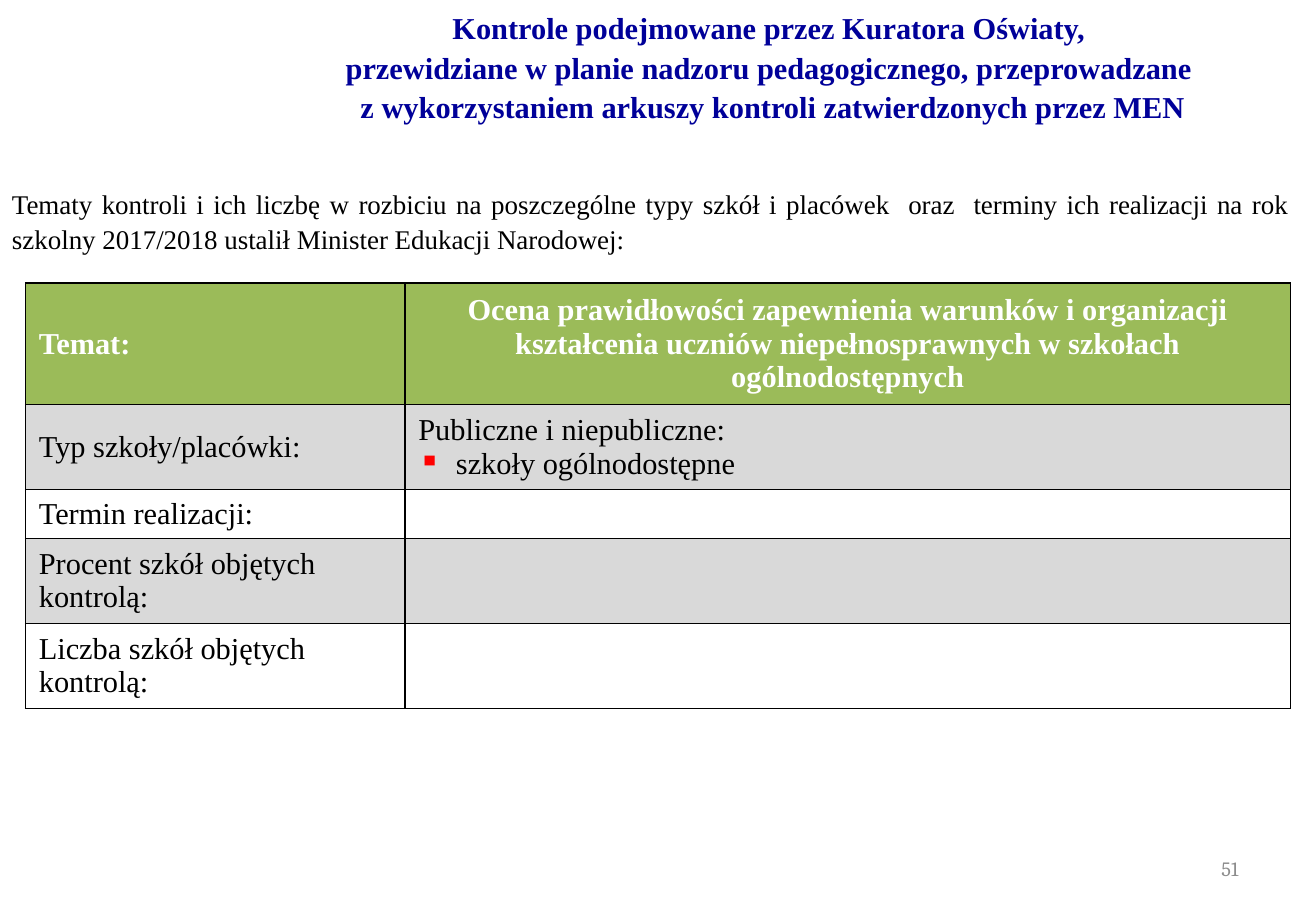
from lxml import etree
from pptx import Presentation
from pptx import util as u
from pptx.dml.color import RGBColor
from pptx.enum import text
from pptx.oxml import ns

COLORS = {"navy": "000099", "black": "000000", "white": "FFFFFF", "green": "9BBB59",
          "band": "D9D9D9", "bullet": "FF0000", "number": "8C8C8C"}
SERIF = "Times New Roman"
TITLE = {"name": SERIF, "size": u.Pt(18), "bold": True, "color": "navy"}
INTRO = {"name": SERIF, "size": u.Pt(16), "bold": False, "color": "black"}
HEAD = {**TITLE, "color": "white"}
CELL = {**INTRO, "size": u.Pt(18)}
NUMBER = {"name": "Cambria", "size": u.Pt(12), "bold": False, "color": "number"}
LEFT, CENTER, RIGHT, JUSTIFY = (text.PP_ALIGN.LEFT, text.PP_ALIGN.CENTER,
                                text.PP_ALIGN.RIGHT, text.PP_ALIGN.JUSTIFY)
TOP, MIDDLE = text.MSO_ANCHOR.TOP, text.MSO_ANCHOR.MIDDLE
ROWS = [
    (0.94, "Temat:", ["Ocena prawidłowości zapewnienia warunków i organizacji "
                      "kształcenia uczniów niepełnosprawnych w szkołach ogólnodostępnych"]),
    (0.66, "Typ szkoły/placówki:", ["Publiczne i niepubliczne:", "▪szkoły ogólnodostępne"]),
    (0.4, "Termin realizacji:", [""]),
    (0.65, "Procent szkół objętych kontrolą:", [""]),
    (0.65, "Liczba szkół objętych kontrolą:", [""]),
]


def style_font(font, style):
    for key, value in style.items():
        if key == "color":
            font.color.rgb = RGBColor.from_string(COLORS[value])
        else:
            setattr(font, key, value)


def add_bullet(para):
    props = para._p.get_or_add_pPr()
    props.set("marL", str(u.Inches(0.31)))
    props.set("indent", str(u.Inches(-0.31)))
    color = etree.SubElement(props, ns.qn("a:buClr"))
    etree.SubElement(color, ns.qn("a:srgbClr"), val=COLORS["bullet"])
    etree.SubElement(props, ns.qn("a:buChar"), char="▪")


def write(frame, lines, style, align, spacing=None):
    for index, line in enumerate(lines):
        para = frame.add_paragraph() if index else frame.paragraphs[0]
        para.alignment = align
        para.line_spacing = spacing
        if line.startswith("▪"):
            add_bullet(para)
        para.text = line.removeprefix("▪")
        style_font(para.font, style)
        for span in para.runs:
            style_font(span.font, style)


def add_text(page, box, line, style, align, anchor, spacing=None):
    frame = page.shapes.add_textbox(*map(u.Inches, box)).text_frame
    frame.word_wrap = True
    frame.vertical_anchor = anchor
    write(frame, [line], style, align, spacing)


def add_borders(cell):
    props = cell._tc.get_or_add_tcPr()
    for index, side in enumerate(("lnL", "lnR", "lnT", "lnB")):
        line = etree.Element(ns.qn(f"a:{side}"), w=str(u.Pt(1)))
        fill = etree.SubElement(line, ns.qn("a:solidFill"))
        etree.SubElement(fill, ns.qn("a:srgbClr"), val=COLORS["black"])
        props.insert(index, line)


def add_inspection_table(page, box):
    table = page.shapes.add_table(len(ROWS), 2, *map(u.Inches, box)).table
    label_width = 0.3 * box[2]
    for column, width in zip(table.columns, (label_width, box[2] - label_width)):
        column.width = u.Inches(width)
    for index, (height, label, details) in enumerate(ROWS):
        table.rows[index].height = u.Inches(height)
        fill = "band" if index % 2 else "white"
        for cell, lines, align in zip(table.rows[index].cells, ([label], details),
                                      (LEFT, LEFT if index else CENTER)):
            cell.vertical_anchor = MIDDLE
            cell.margin_left = cell.margin_right = u.Inches(0.11)
            cell.margin_top = cell.margin_bottom = u.Inches(0.05)
            cell.fill.solid()
            cell.fill.fore_color.rgb = RGBColor.from_string(COLORS[fill if index else "green"])
            add_borders(cell)
            write(cell.text_frame, lines, CELL if index else HEAD, align)


def main():
    deck = Presentation()
    deck.slide_width, deck.slide_height = u.Inches(10.83), u.Inches(7.5)
    page = deck.slides.add_slide(deck.slide_layouts[6])
    add_text(page, (1.88, 0.03, 8.96, 1.02),
             "Kontrole podejmowane przez Kuratora Oświaty, \v"
             "przewidziane w planie nadzoru pedagogicznego, przeprowadzane \v"
             "z wykorzystaniem arkuszy kontroli zatwierdzonych przez MEN",
             TITLE, CENTER, MIDDLE, 1.08)
    add_text(page, (0, 1.47, 10.71, 0.7),
             "Tematy kontroli i ich liczbę w rozbiciu na poszczególne typy szkół i placówek  "
             "oraz  terminy ich realizacji na rok szkolny 2017/2018 ustalił "
             "Minister Edukacji Narodowej:",
             INTRO, JUSTIFY, TOP, 1.08)
    add_inspection_table(page, (0.21, 2.33, 10.41, 3.3))
    add_text(page, (7.76, 6.95, 2.53, 0.4), "51", NUMBER, RIGHT, MIDDLE)
    deck.save("out.pptx")


if __name__ == "__main__":
    main()
